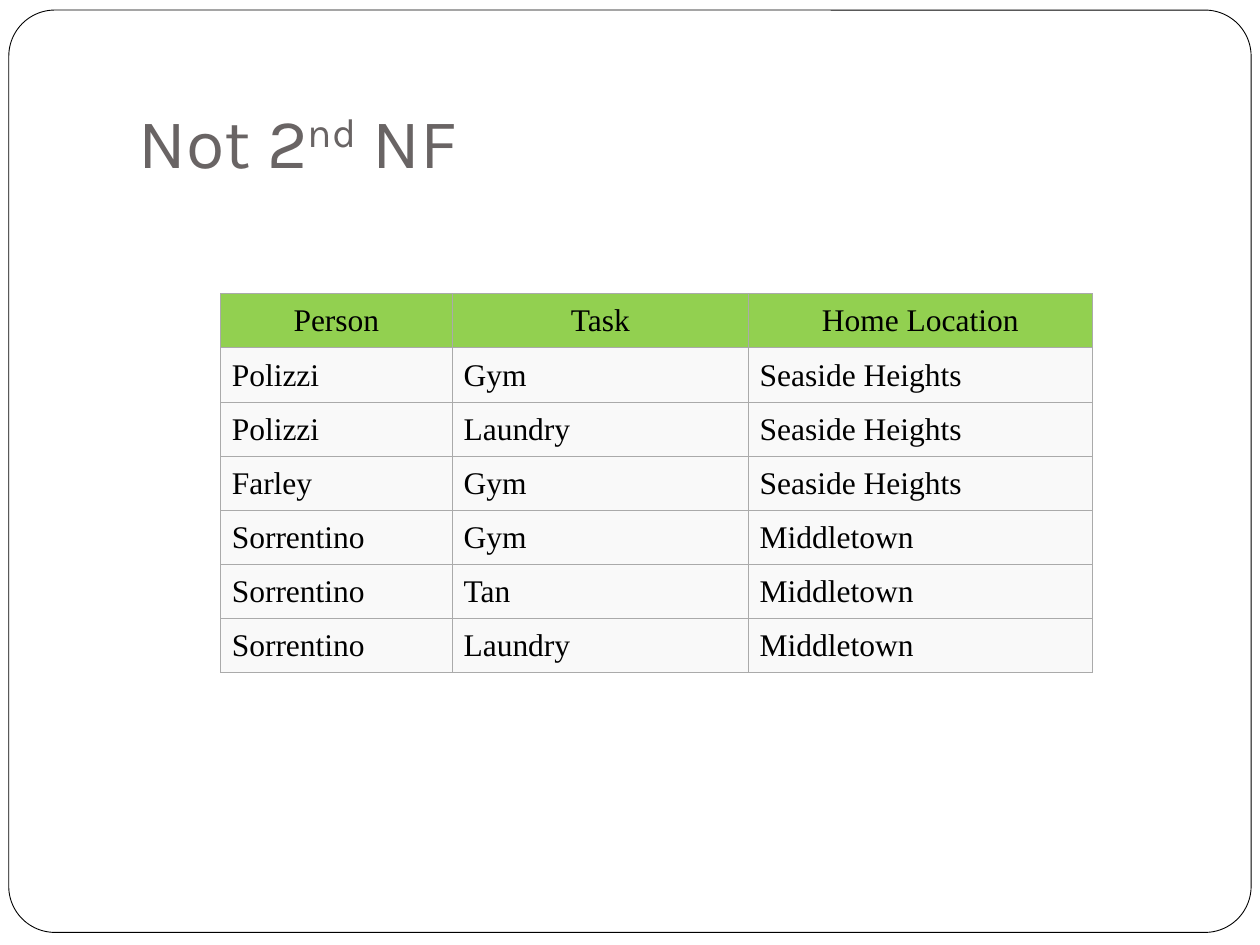
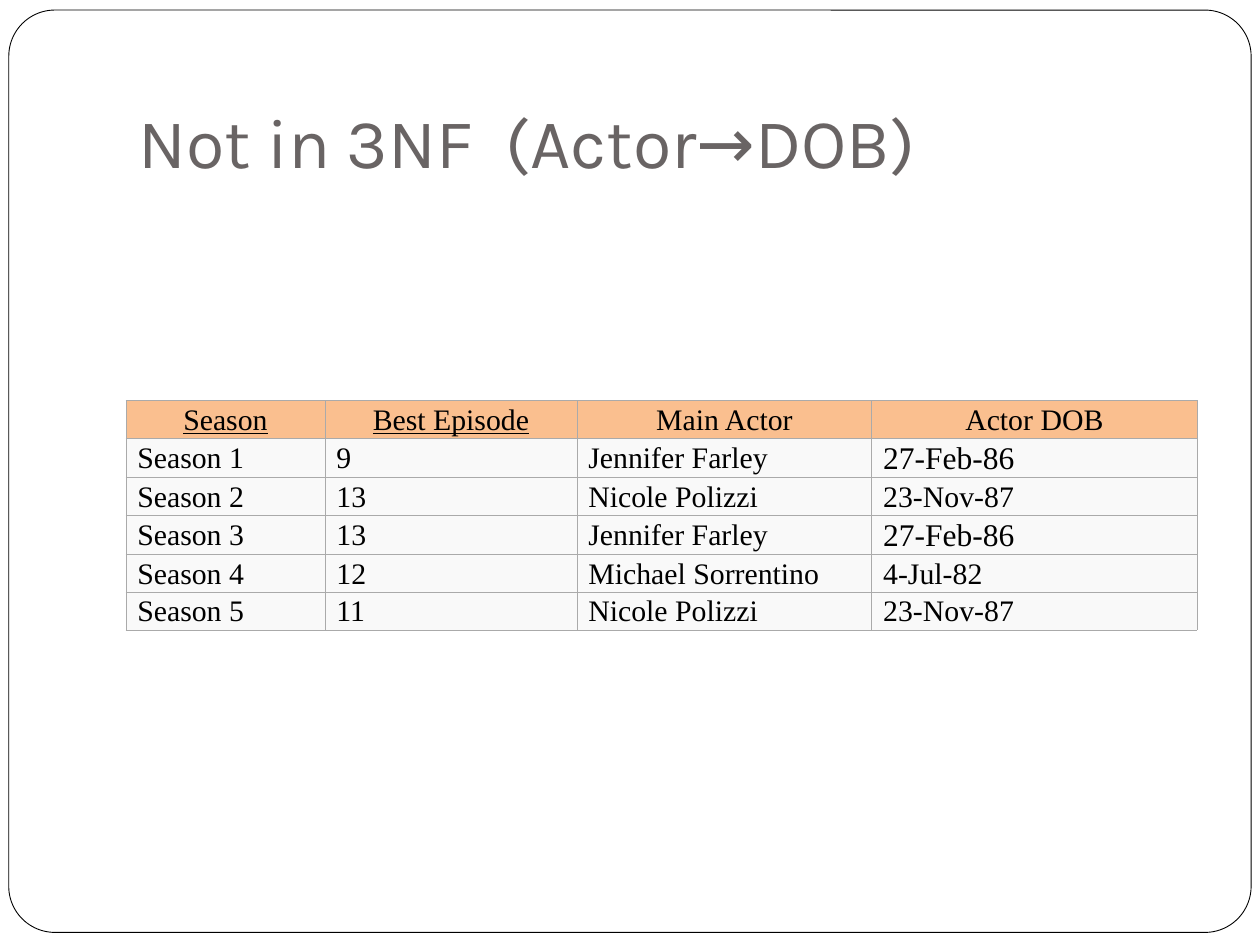
from lxml import etree
from pptx import Presentation
from pptx.dml.color import RGBColor
from pptx.enum.shapes import MSO_SHAPE
from pptx.enum.text import MSO_ANCHOR, PP_ALIGN
from pptx.oxml.ns import qn
from pptx.util import Inches, Pt

ROUNDED = MSO_SHAPE.ROUNDED_RECTANGLE
BOTTOM, MIDDLE = MSO_ANCHOR.BOTTOM, MSO_ANCHOR.MIDDLE
CENTER, LEFT = PP_ALIGN.CENTER, PP_ALIGN.LEFT

SLIDE_W, SLIDE_H = 10, 7.5
TITLE_FONT, TABLE_FONT = "Karla", "Times New Roman"
WHITE, BLACK, TITLE_GREY = "FFFFFF", "000000", "696464"
ROW_GREY, GRID_GREY = "F9F9F9", "AAAAAA"
GREEN, ORANGE = "92D050", "FABF8F"

TASKS = [
    ("Person", "Task", "Home Location"),
    ("Polizzi", "Gym", "Seaside Heights"),
    ("Polizzi", "Laundry", "Seaside Heights"),
    ("Farley", "Gym", "Seaside Heights"),
    ("Sorrentino", "Gym", "Middletown"),
    ("Sorrentino", "Tan", "Middletown"),
    ("Sorrentino", "Laundry", "Middletown"),
]
EPISODES = [
    ("Season", "Best Episode", "Main Actor", "Actor DOB"),
    ("Season 1", "9", "Jennifer Farley", "27-Feb-86"),
    ("Season 2", "13", "Nicole Polizzi", "23-Nov-87"),
    ("Season 3", "13", "Jennifer Farley", "27-Feb-86"),
    ("Season 4", "12", "Michael Sorrentino", "4-Jul-82"),
    ("Season 5", "11", "Nicole Polizzi", "23-Nov-87"),
]
KEY_COLUMNS = ("Season", "Best Episode")
LARGER_DATES = {"27-Feb-86": 18}


def color(hex_code):
    """Return the colour for a hex string."""
    return RGBColor.from_string(hex_code)


def style_font(font, name, size, hex_code):
    """Set the typeface, size and colour of a font."""
    font.name = name
    font.size = Pt(size)
    font.color.rgb = color(hex_code)


def set_margins(holder, left, top, right, bottom):
    """Set the inner margins of a text frame or cell in inches."""
    holder.margin_left, holder.margin_top = Inches(left), Inches(top)
    holder.margin_right, holder.margin_bottom = Inches(right), Inches(bottom)


def add_frame(slide):
    """Draw the rounded outline around the slide."""
    frame = slide.shapes.add_shape(
        ROUNDED, Inches(0.07), Inches(0.08), Inches(9.86), Inches(7.32))
    frame.adjustments[0] = 0.05
    frame.shadow.inherit = False
    frame.fill.solid()
    frame.fill.fore_color.rgb = color(WHITE)
    frame.line.color.rgb = color(BLACK)
    frame.line.width = Pt(0.5)


def add_title(slide, parts, raised):
    """Write the title from its parts, lifting the raised one as superscript."""
    title = slide.shapes.add_textbox(
        Inches(0.1 * SLIDE_W), Inches(0.04 * SLIDE_H), Inches(0.85 * SLIDE_W), Inches(1.25))
    text_frame = title.text_frame
    text_frame.word_wrap = True
    text_frame.vertical_anchor = BOTTOM
    set_margins(text_frame, 0.1, 0.05, 0.1, 0.1)
    for part in parts:
        run = text_frame.paragraphs[0].add_run()
        run.text = part
        style_font(run.font, TITLE_FONT, 40, TITLE_GREY)
        if part == raised:
            run._r.get_or_add_rPr().set("baseline", "30000")


def add_borders(cell):
    """Draw thin grey lines on all four sides of a cell."""
    properties = cell._tc.get_or_add_tcPr()
    for side in ("a:lnL", "a:lnR", "a:lnT", "a:lnB"):
        border = etree.SubElement(properties, qn(side), w=str(Pt(0.5)))
        fill = etree.SubElement(border, qn("a:solidFill"))
        etree.SubElement(fill, qn("a:srgbClr"), val=GRID_GREY)


def fill_cell(cell, text, size, is_header, header_fill):
    """Write and format one header or body cell."""
    add_borders(cell)
    cell.fill.solid()
    cell.fill.fore_color.rgb = color(header_fill if is_header else ROW_GREY)
    cell.vertical_anchor = MIDDLE
    set_margins(cell, 0.01 if is_header else 0.09, 0.01, 0.01, 0)
    paragraph = cell.text_frame.paragraphs[0]
    paragraph.text = text
    paragraph.alignment = CENTER if is_header else LEFT
    font = paragraph.runs[0].font
    style_font(font, TABLE_FONT, LARGER_DATES.get(text, size), BLACK)
    font.bold = False
    font.underline = is_header and text in KEY_COLUMNS


def add_relation(slide, records, left, top, widths, row_height, size, header_fill):
    """Add a relation as a table with a coloured header row."""
    table = slide.shapes.add_table(
        len(records), len(widths), Inches(left), Inches(top),
        Inches(sum(widths)), Inches(row_height * len(records))).table
    table.horz_banding = False
    for column, width in zip(table.columns, widths):
        column.width = Inches(width)
    for row_index, record in enumerate(records):
        table.rows[row_index].height = Inches(row_height)
        for column_index, text in enumerate(record):
            fill_cell(table.cell(row_index, column_index), text, size,
                      row_index == 0, header_fill)


def add_example(deck, title_parts, raised=None):
    """Add a framed slide with its title."""
    slide = deck.slides.add_slide(deck.slide_layouts[6])
    add_frame(slide)
    add_title(slide, title_parts, raised)
    return slide


def main():
    """Build the two normal form examples."""
    deck = Presentation()
    deck.slide_width, deck.slide_height = Inches(SLIDE_W), Inches(SLIDE_H)

    second_form = add_example(deck, ["Not 2", "nd", " NF"], raised="nd")
    add_relation(second_form, TASKS, 1.75, 2.33, (1.84, 2.35, 2.73), 0.43, 18, GREEN)

    third_form = add_example(deck, ["Not in 3NF  (Actor→DOB)"])
    add_relation(third_form, EPISODES, 1, 3.18, (1.58, 2, 2.34, 2.58), 0.3, 17, ORANGE)

    deck.save("out.pptx")


if __name__ == "__main__":
    main()
